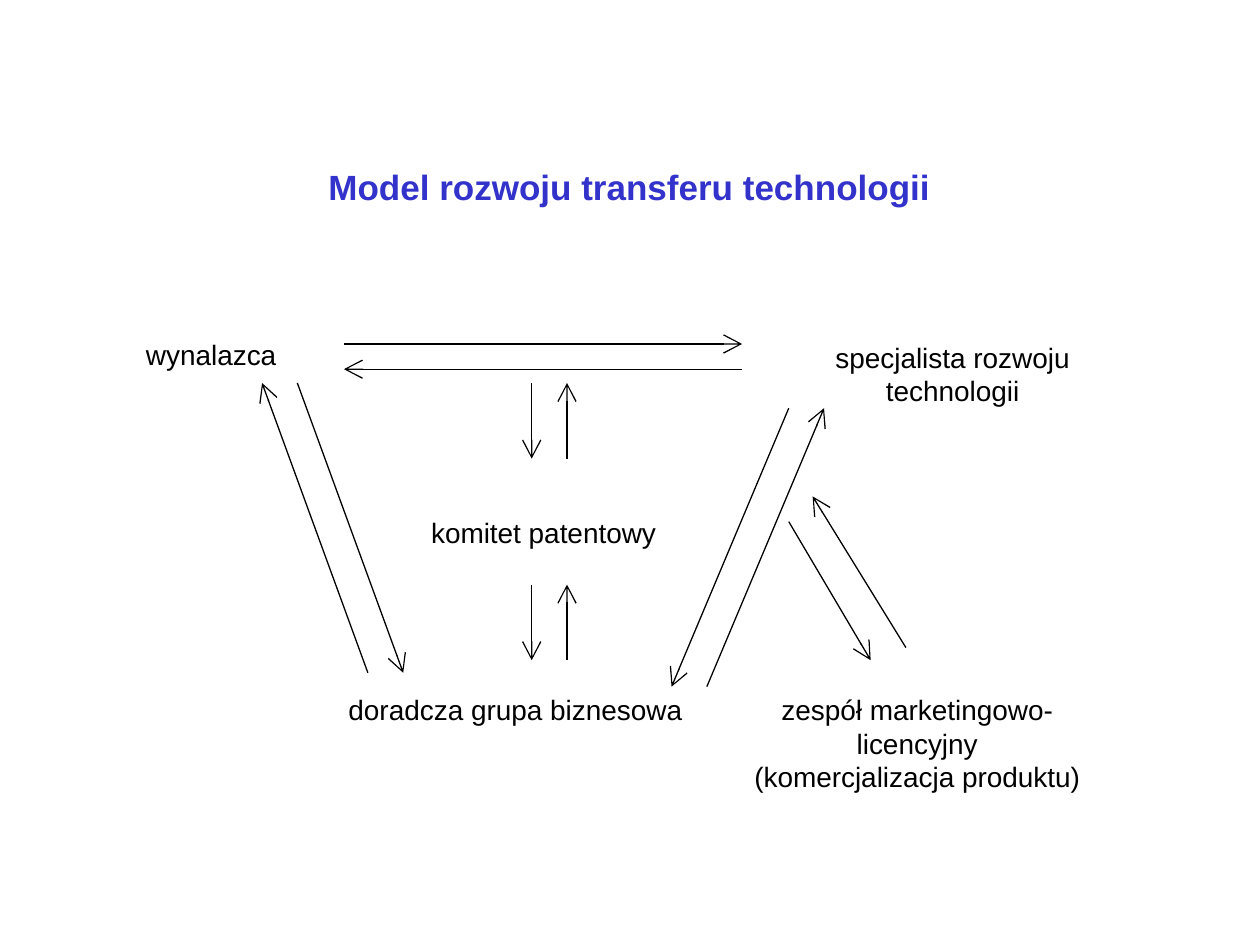
from lxml import etree
from pptx import Presentation
from pptx.dml.color import RGBColor
from pptx.enum.shapes import MSO_CONNECTOR as Connector
from pptx.enum.text import MSO_ANCHOR as Anchor, PP_ALIGN as Align
from pptx.oxml.ns import qn
from pptx.util import Inches, Pt

BLACK, BLUE = "000000", "3333CC"
BODY = {"name": "Arial", "size": Pt(16), "bold": False}
TITLE = {"name": "Arial", "size": Pt(20), "bold": True}
LABELS = [
    (0, 0, 1.58, 0.4, ["wynalazca"], Align.LEFT, 10),
    (5.36, 0.02, 2.28, 0.63, ["specjalista rozwoju technologii"], Align.CENTER, 0),
    (2.14, 1.41, 2.23, 0.6, ["komitet patentowy"], Align.CENTER, 10),
    (1.42, 2.82, 3.22, 0.51, ["doradcza grupa biznesowa"], Align.CENTER, 10),
    (4.64, 2.82, 3.16, 0.9,
     ["zespół marketingowo-licencyjny", "(komercjalizacja produktu)"], Align.CENTER, 0),
]
GAP = 0.28
PAIRS = [
    ((1.67, 0.1), (4.83, 0.1), (0, 0.2)),
    ((1.3, 0.41), (2.14, 2.71), (-GAP, 0)),
    ((5.2, 0.61), (4.27, 2.82), (GAP, 0)),
    ((3.16, 0.41), (3.16, 1.01), (GAP, 0)),
    ((3.16, 2.01), (3.16, 2.61), (GAP, 0)),
]
MARKETING_ARROWS = [((5.2, 1.51), (5.85, 2.61)), ((6.13, 2.51), (5.39, 1.31))]


def color(value):
    """Turn a hex string into a colour."""
    return RGBColor.from_string(value)


def add_text(slide, box, lines, font, ink, align=Align.CENTER, after=0,
             wrap=True, anchor=Anchor.TOP):
    """Place a text box with one paragraph per line."""
    frame = slide.shapes.add_textbox(*map(Inches, box)).text_frame
    for name, value in {"word_wrap": wrap, "vertical_anchor": anchor}.items():
        setattr(frame, name, value)
    frame.text = "\n".join(lines)
    for paragraph in frame.paragraphs:
        paragraph.alignment = align
        paragraph.space_after = Pt(after)
        for name, value in font.items():
            setattr(paragraph.font, name, value)
        paragraph.font.color.rgb = color(ink)


def add_arrow(slide, origin, start, end):
    """Draw an open-headed arrow between two points relative to the origin."""
    points = [Inches(base + part) for point in (start, end)
              for base, part in zip(origin, point)]
    arrow = slide.shapes.add_connector(Connector.STRAIGHT, *points)
    arrow.line.width = Pt(0.75)
    arrow.line.color.rgb = color(BLACK)
    properties = arrow.line._get_or_add_ln()
    etree.SubElement(properties, qn("a:tailEnd"), type="arrow", w="lg", len="lg")
    etree.SubElement(properties.getparent(), qn("a:effectLst"))


def add_exchange(slide, origin, start, end, shift):
    """Draw an arrow and its parallel return, moved by the shift."""
    add_arrow(slide, origin, start, end)
    moved = [tuple(part + move for part, move in zip(point, shift))
             for point in (end, start)]
    add_arrow(slide, origin, *moved)


def add_title(slide, box):
    """Place the slide heading."""
    add_text(slide, box, ["Model rozwoju transferu technologii"], TITLE, BLUE,
             wrap=False, anchor=Anchor.MIDDLE)


def add_diagram(slide, origin):
    """Place the participants and the exchanges between them."""
    left, top = origin
    for x, y, width, height, lines, align, after in LABELS:
        add_text(slide, (left + x, top + y, width, height), lines, BODY, BLACK,
                 align, after)
    for pair in PAIRS:
        add_exchange(slide, origin, *pair)
    for start, end in MARKETING_ARROWS:
        add_arrow(slide, origin, start, end)


def main():
    """Build and save the presentation."""
    presentation = Presentation()
    presentation.slide_width, presentation.slide_height = Inches(10), Inches(7.5)
    slide = presentation.slides.add_slide(presentation.slide_layouts[6])
    add_title(slide, (2.49, 1.26, 5.01, 0.44))
    add_diagram(slide, (1.06, 2.63))
    presentation.save("out.pptx")


if __name__ == "__main__":
    main()
